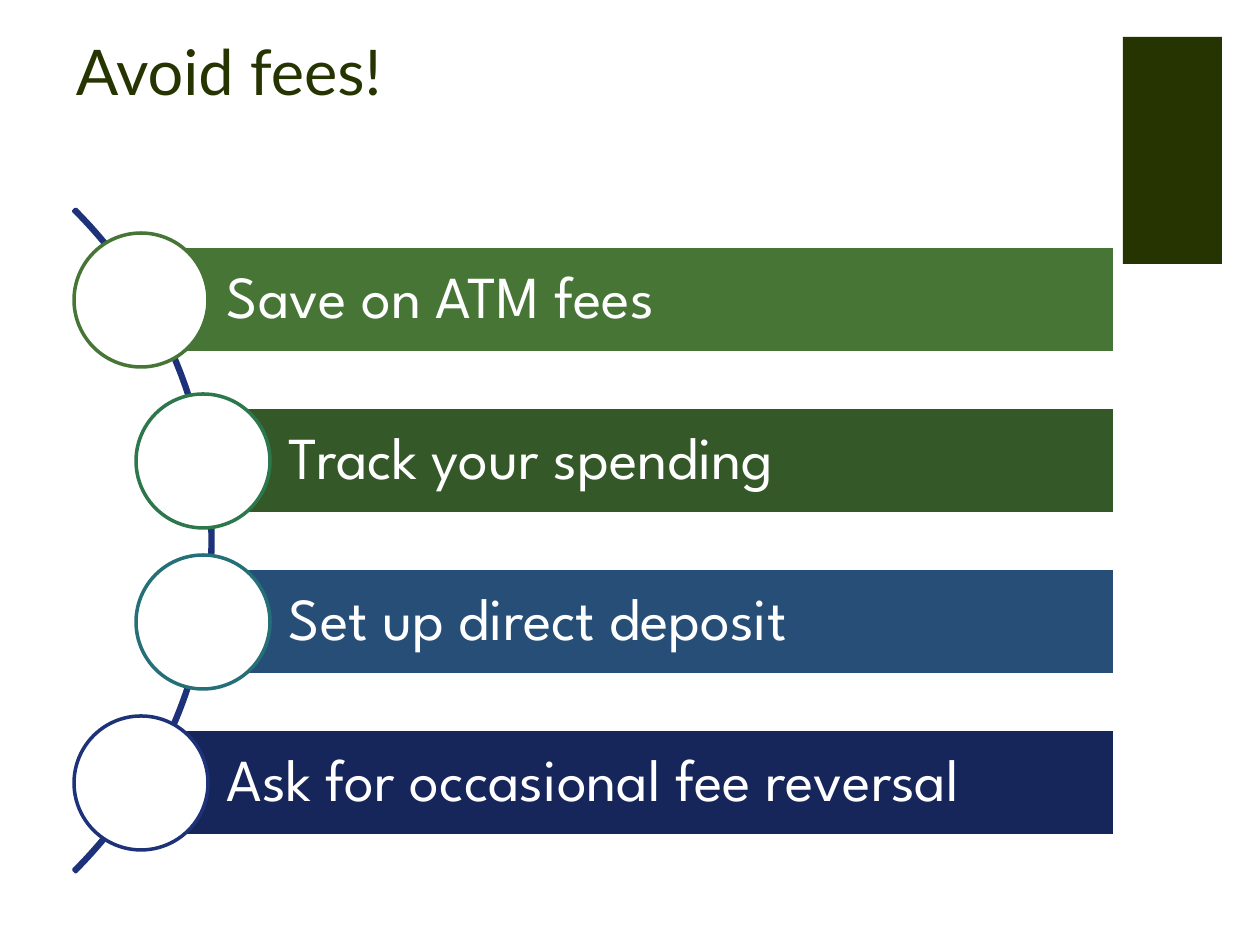
import pptx
import pptx.util
import pptx.dml.color
import pptx.enum.shapes
import pptx.enum.text

KIND = pptx.enum.shapes.MSO_SHAPE
ANCHOR = pptx.enum.text.MSO_ANCHOR
ALIGN = pptx.enum.text.PP_ALIGN
SCALE = 914400 // 126  # EMU in one px


class Theme:
    dark = "263401"
    white = "FFFFFF"
    arc = "1D3278"
    title_font, title_size = "Lato", 36
    bar_font, bar_size = "League Spartan", 34
    line = 2


# Wording, bar colour, ring colour, left edge of the bar
STEPS = [
    ("Save on ATM fees", "467536", "467536", 141),
    ("Track your spending", "345828", "2D774C", 203),
    ("Set up direct deposit", "264E77", "257078", 203),
    ("Ask for occasional fee reversal", "16255A", "1D3278", 141),
]
TOP, PITCH, RIGHT = 246, 161, 1115
BAR, RING = 107, 134


def px(num):
    return pptx.util.Emu(num * SCALE)


def color(code):
    return pptx.dml.color.RGBColor.from_string(code)


def add_shape(slide, kind, box, fill=None, line=None):
    shape = slide.shapes.add_shape(kind, *map(px, box))
    shape.shadow.inherit = False
    if fill:
        shape.fill.solid()
        shape.fill.fore_color.rgb = color(fill)
    else:
        shape.fill.background()
    if line:
        shape.line.color.rgb = color(line)
        shape.line.width = pptx.util.Pt(Theme.line)
    else:
        shape.line.fill.background()
    return shape


def set_text(shape, words, font, size, ink, anchor, insets):
    frame = shape.text_frame
    frame.word_wrap = True
    frame.vertical_anchor = anchor
    (frame.margin_left, frame.margin_top,
     frame.margin_right, frame.margin_bottom) = map(px, insets)
    para = frame.paragraphs[0]
    para.alignment = ALIGN.LEFT
    para.line_spacing = 0.9
    run = para.add_run()
    run.text = words
    run.font.name = font
    run.font.size = pptx.util.Pt(size)
    run.font.color.rgb = color(ink)


def add_title(slide, words):
    box = slide.shapes.add_textbox(*map(px, (63, 40, 897, 75)))
    set_text(box, words, Theme.title_font, Theme.title_size, Theme.dark,
             ANCHOR.BOTTOM, (13, 6, 13, 6))


def add_arc(slide):
    arc = add_shape(slide, KIND.BLOCK_ARC, (-724, 72, 937, 937), line=Theme.arc)
    # Start angle, end angle, thickness
    for i, num in enumerate((189, 27, 0.003)):
        arc.adjustments[i] = num


def add_step(slide, row, words, fill, ring, left):
    top = TOP + row * PITCH
    bar = add_shape(slide, KIND.RECTANGLE, (left, top, RIGHT - left, BAR),
                    fill, Theme.white)
    set_text(bar, words, Theme.bar_font, Theme.bar_size, Theme.white,
             ANCHOR.MIDDLE, (86, 11, 11, 11))
    # Ring centred on the left end of the bar
    add_shape(slide, KIND.OVAL,
              (left - RING // 2, top - (RING - BAR) // 2, RING, RING),
              Theme.white, ring)


def main():
    deck = pptx.Presentation()
    deck.slide_width, deck.slide_height = px(1260), px(945)
    slide = deck.slides.add_slide(deck.slide_layouts[6])

    # Corner block and title
    add_shape(slide, KIND.RECTANGLE, (1123, 37, 99, 227), Theme.dark)
    add_title(slide, "Avoid fees!")

    # Curved list
    add_arc(slide)
    for row, step in enumerate(STEPS):
        add_step(slide, row, *step)

    deck.save("out.pptx")


if __name__ == "__main__":
    main()
